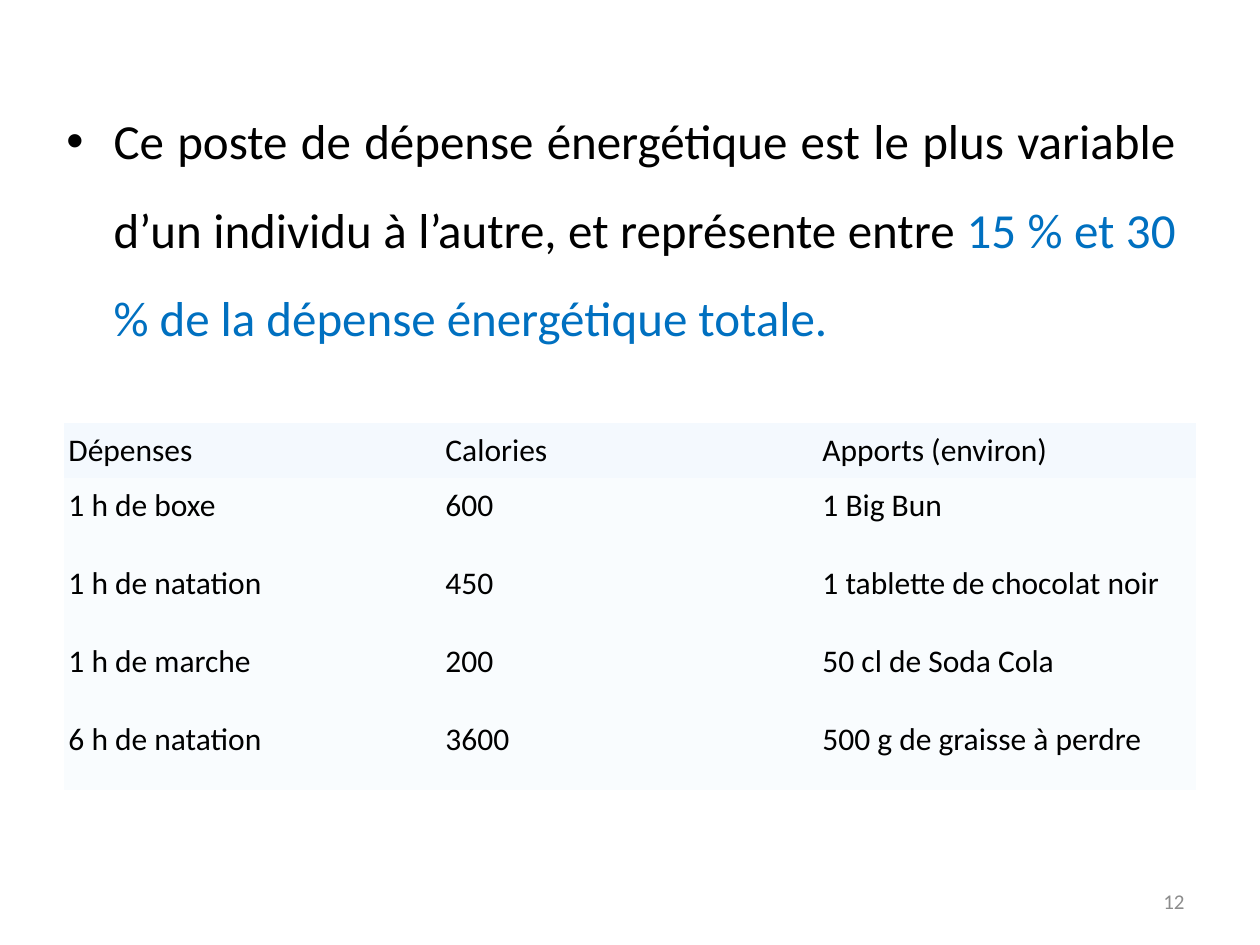
from lxml import etree
from pptx import Presentation
from pptx.dml.color import RGBColor
from pptx.enum.text import MSO_ANCHOR, PP_ALIGN
from pptx.oxml.ns import qn
from pptx.util import Cm, Pt

MIDDLE = MSO_ANCHOR.MIDDLE
JUSTIFY = PP_ALIGN.JUSTIFY
RIGHT = PP_ALIGN.RIGHT


def color(code):
    return RGBColor.from_string(code)


def write(para, text, size=18, ink="000000", align=None):
    run = para.add_run()
    run.text = text
    run.font.name = "Calibri"
    run.font.size = Pt(size)
    run.font.color.rgb = color(ink)
    if align is not None:
        para.alignment = align


deck = Presentation()
deck.slide_width = Cm(25.4)
deck.slide_height = Cm(19.05)
slide = deck.slides.add_slide(deck.slide_layouts[6])

body = slide.shapes.add_textbox(Cm(1.09), Cm(1.52), Cm(22.86), Cm(5.79)).text_frame
body.word_wrap = True
para = body.paragraphs[0]
para.line_spacing = 1.5
para.space_before = Pt(5.6)
write(para, "Ce poste de dépense énergétique est le plus variable d’un individu à l’autre, et représente entre ",
      size=28, align=JUSTIFY)
write(para, "15 % et 30 % de la dépense énergétique totale.", size=28, ink="0070C0")
props = para._p.get_or_add_pPr()
props.set("marL", str(Cm(0.95)))
props.set("indent", str(-Cm(0.95)))
etree.SubElement(props, qn("a:buFont")).set("typeface", "Arial")
etree.SubElement(props, qn("a:buChar")).set("char", "•")

rows = [
    ("Dépenses", "Calories", "Apports (environ)"),
    ("1 h de boxe", "600", "1 Big Bun"),
    ("1 h de natation", "450", "1 tablette de chocolat noir"),
    ("1 h de marche", "200", "50 cl de Soda Cola"),
    ("6 h de natation", "3600", "500 g de graisse à perdre"),
]
heights = [1.11, 1.11, 2.03, 1.11, 2.03]
table = slide.shapes.add_table(len(rows), 3, Cm(1.3), Cm(8.53), Cm(22.8), Cm(sum(heights))).table
for column in table.columns:
    column.width = Cm(7.6)
for r, (row, height) in enumerate(zip(rows, heights)):
    table.rows[r].height = Cm(height)
    for c, text in enumerate(row):
        cell = table.cell(r, c)
        cell.fill.solid()
        cell.fill.fore_color.rgb = color("F9FCFE" if r else "F4F9FE")
        cell.margin_left = cell.margin_right = Cm(0.08)
        cell.margin_top = cell.margin_bottom = Cm(0.08)
        cell.vertical_anchor = MIDDLE
        write(cell.text_frame.paragraphs[0], text)
style = table._tbl.tblPr.find(qn("a:tableStyleId"))
style.text = "{2D5ABB26-0587-4C30-8999-92F81FD0307C}"

number = slide.shapes.add_textbox(Cm(18.21), Cm(17.65), Cm(5.92), Cm(1.02)).text_frame
number.word_wrap = True
number.vertical_anchor = MIDDLE
write(number.paragraphs[0], "12", size=12, ink="8C8C8C", align=RIGHT)

deck.save("out.pptx")
